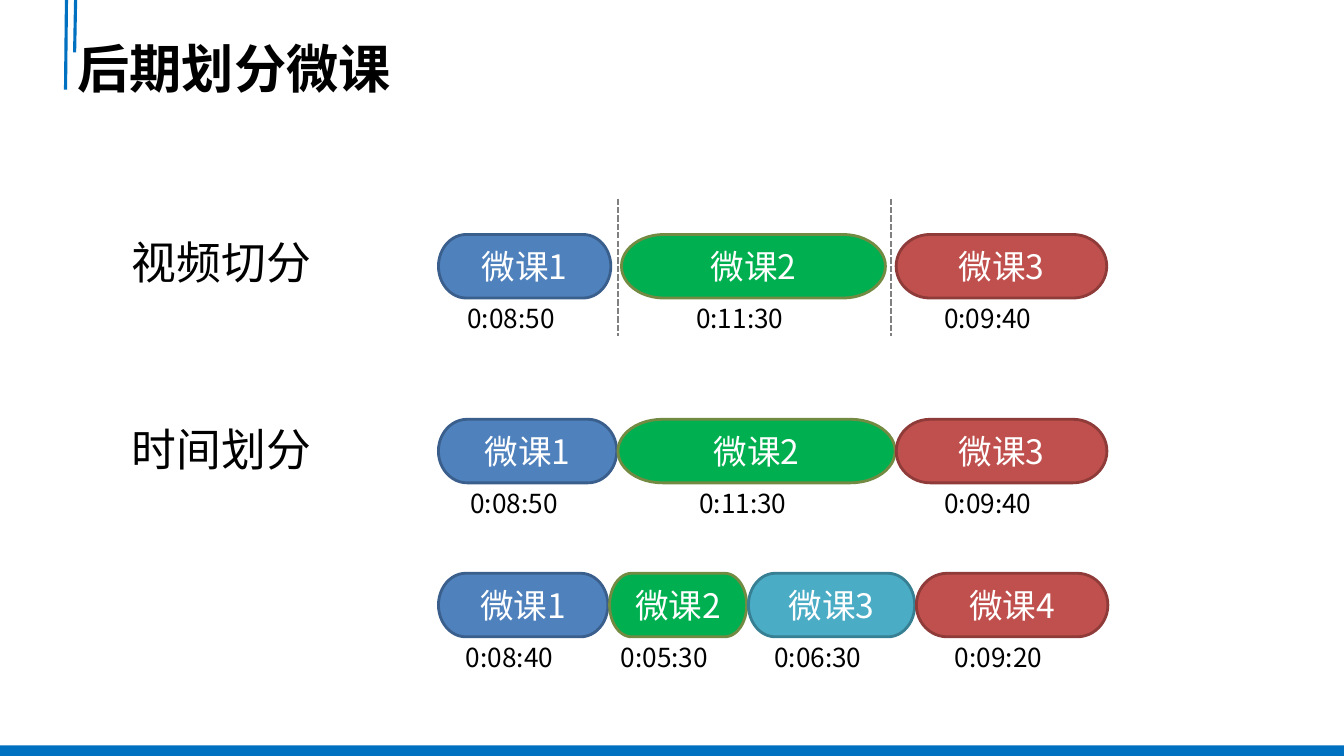
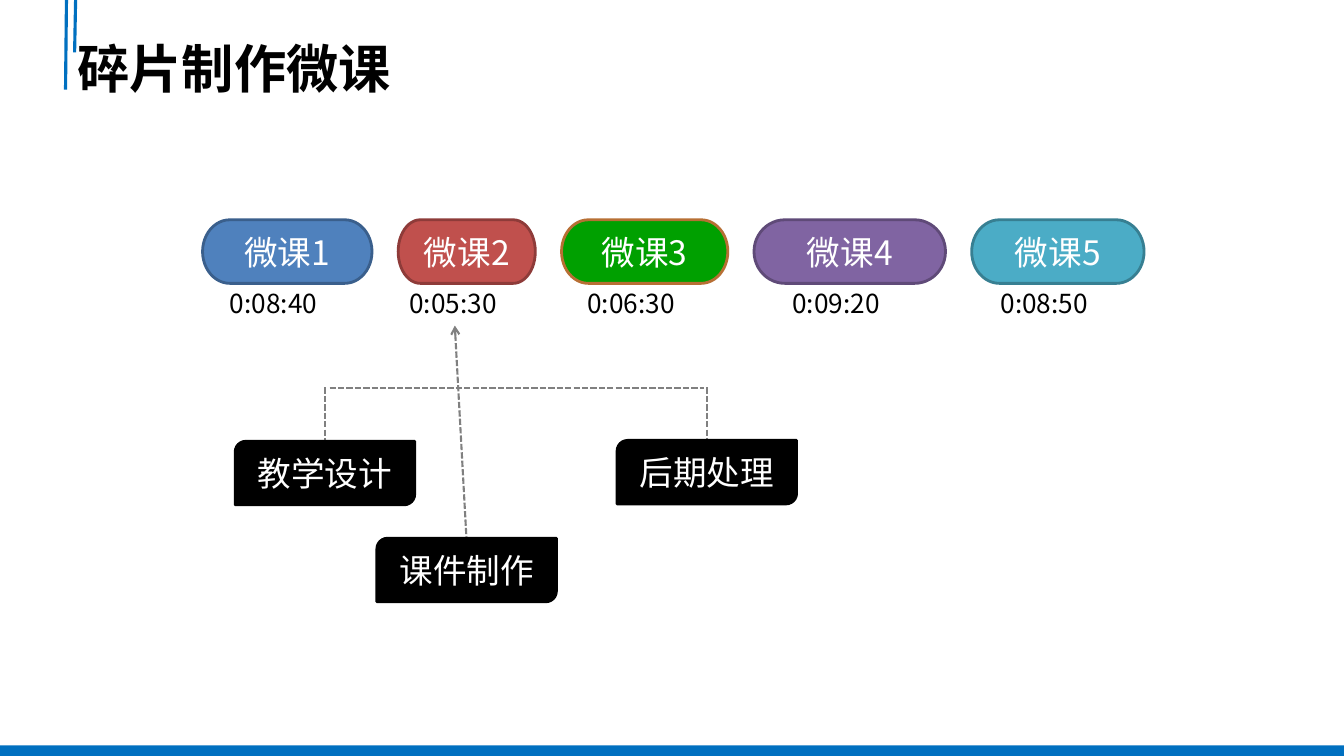
import pptx
import pptx.dml.color
import pptx.enum.dml
import pptx.enum.shapes
import pptx.enum.text
import pptx.oxml
import pptx.oxml.ns
import pptx.util

Pt = pptx.util.Pt
RGBColor = pptx.dml.color.RGBColor
MSO_SHAPE = pptx.enum.shapes.MSO_SHAPE
PP_ALIGN = pptx.enum.text.PP_ALIGN
MSO_ANCHOR = pptx.enum.text.MSO_ANCHOR
qn = pptx.oxml.ns.qn

FONT = "Noto Sans CJK SC"
WIDTH, HEIGHT = 960, 540
PILL_HEIGHT = 45.4

BLACK = RGBColor(0x00, 0x00, 0x00)
WHITE = RGBColor(0xFF, 0xFF, 0xFF)
ACCENT = RGBColor(0x00, 0x70, 0xC0)
GRAY = RGBColor(0x80, 0x80, 0x80)
BLUE = RGBColor(0x4F, 0x81, 0xBD)
GREEN = RGBColor(0x00, 0xB0, 0x50)
LEAF = RGBColor(0x00, 0xA0, 0x00)
RED = RGBColor(0xC0, 0x50, 0x4D)
TEAL = RGBColor(0x4B, 0xAC, 0xC6)
PURPLE = RGBColor(0x80, 0x64, 0xA2)
OUTLINES = {
    BLUE: RGBColor(0x3A, 0x5F, 0x8C),
    GREEN: RGBColor(0x73, 0x8A, 0x42),
    LEAF: RGBColor(0xB7, 0x6F, 0x34),
    RED: RGBColor(0x8E, 0x3B, 0x39),
    TEAL: RGBColor(0x37, 0x7F, 0x92),
    PURPLE: RGBColor(0x5F, 0x4A, 0x78),
}


class Deck:
    def __init__(self):
        self.prs = pptx.Presentation()
        self.prs.slide_width = Pt(WIDTH)
        self.prs.slide_height = Pt(HEIGHT)
        self.s = None

    def slide(self, title):
        self.s = self.prs.slides.add_slide(self.prs.slide_layouts[5])
        sp = self.s.shapes.title
        sp.left, sp.top, sp.width, sp.height = Pt(48.2), Pt(21.6), Pt(864), Pt(53.3)
        self.label(sp, title, 37.3, BLACK, PP_ALIGN.LEFT, MSO_ANCHOR.MIDDLE, True)
        self.line(47.5, 0, 46.8, 64, ACCENT, 2.25)
        self.line(54, 0, 53.3, 37.5, ACCENT, 2.25)
        self.shape(MSO_SHAPE.RECTANGLE, 0, 532.5, WIDTH, 7.5, ACCENT)

    def label(self, sp, text, size, color, align, anchor, bold=False):
        tf = sp.text_frame
        tf.text = text
        tf.word_wrap = True
        tf.vertical_anchor = anchor
        p = tf.paragraphs[0]
        p.alignment = align
        r = p.runs[0]
        r.font.name = FONT
        r.font.size = Pt(size)
        r.font.bold = bold
        r.font.color.rgb = color
        ea = pptx.oxml.parse_xml(
            f'<a:ea {pptx.oxml.ns.nsdecls("a")} typeface="{FONT}"/>')
        r.font._element.find(qn("a:latin")).addnext(ea)

    def text(self, x, y, w, h, text, size):
        sp = self.s.shapes.add_textbox(Pt(x), Pt(y), Pt(w), Pt(h))
        self.label(sp, text, size, BLACK, PP_ALIGN.LEFT, MSO_ANCHOR.TOP)

    def shape(self, kind, x, y, w, h, fill, outline=None, text=None):
        sp = self.s.shapes.add_shape(kind, Pt(x), Pt(y), Pt(w), Pt(h))
        sp.shadow.inherit = False
        sp.fill.solid()
        sp.fill.fore_color.rgb = fill
        if outline is None:
            sp.line.fill.background()
        else:
            sp.line.color.rgb = outline
            sp.line.width = Pt(2)
        if text:
            self.label(sp, text, 24, WHITE, PP_ALIGN.CENTER, MSO_ANCHOR.MIDDLE)

    def line(self, x1, y1, x2, y2, color=GRAY, width=1.5, dashed=False, arrow=False):
        c = self.s.shapes.add_connector(
            pptx.enum.shapes.MSO_CONNECTOR.STRAIGHT, Pt(x1), Pt(y1), Pt(x2), Pt(y2))
        c.line.color.rgb = color
        c.line.width = Pt(width)
        if dashed:
            c.line.dash_style = pptx.enum.dml.MSO_LINE.SQUARE_DOT
        props = c._element.spPr
        if arrow:
            head = pptx.oxml.parse_xml(
                f'<a:headEnd {pptx.oxml.ns.nsdecls("a")} type="arrow"/>')
            props.find(qn("a:ln")).append(head)
        props.append(pptx.oxml.parse_xml(
            f'<a:effectLst {pptx.oxml.ns.nsdecls("a")}/>'))

    def lessons(self, x, y, gap, items):
        for number, (width, fill, time) in enumerate(items, 1):
            self.shape(MSO_SHAPE.FLOWCHART_TERMINATOR, x, y, width, PILL_HEIGHT,
                       fill, OUTLINES[fill], f"微课{number}")
            self.text(x + width / 2 - 48, y + 45, 79.2, 30, time, 18.7)
            x += width + gap

    def heading(self, y, text):
        self.text(87, y, 144, 46, text, 32)

    def step(self, x, y, text):
        self.shape(MSO_SHAPE.ROUND_2_DIAG_RECTANGLE, x, y, 128.2, PILL_HEIGHT,
                   BLACK, BLACK, text)


def main():
    deck = Deck()

    deck.slide("后期划分微课")
    deck.heading(164.2, "视频切分")
    deck.lessons(313.2, 167.5, 7.6, [
        (123.1, BLUE, "0:08:50"), (188.6, GREEN, "0:11:30"), (150.5, RED, "0:09:40")])
    for x in (441.2, 636.5):
        deck.line(x, 141.8, x, 239.8, dashed=True)
    deck.heading(297.4, "时间划分")
    deck.lessons(313.2, 299.5, 0.8, [
        (127.4, BLUE, "0:08:50"), (198, GREEN, "0:11:30"), (150.5, RED, "0:09:40")])
    deck.lessons(313.2, 409.5, 1.2, [
        (121, BLUE, "0:08:40"), (98, GREEN, "0:05:30"),
        (118.8, TEAL, "0:06:30"), (136.8, RED, "0:09:20")])

    deck.slide("碎片制作微课")
    for x in (232.3, 505.2):
        deck.line(x, 276.8, x, 315, dashed=True)
    deck.line(235.4, 277.3, 502.6, 277.3, dashed=True)
    deck.line(324.9, 232.6, 333.2, 384.5, dashed=True, arrow=True)
    deck.lessons(144.7, 157, 18.7, [
        (121, BLUE, "0:08:40"), (98, RED, "0:05:30"), (118.8, LEAF, "0:06:30"),
        (136.8, PURPLE, "0:09:20"), (123.1, TEAL, "0:08:50")])
    deck.step(168, 315.2, "教学设计")
    deck.step(269.2, 384.5, "课件制作")
    deck.step(440.8, 314.6, "后期处理")

    deck.prs.save("out.pptx")


if __name__ == "__main__":
    main()
